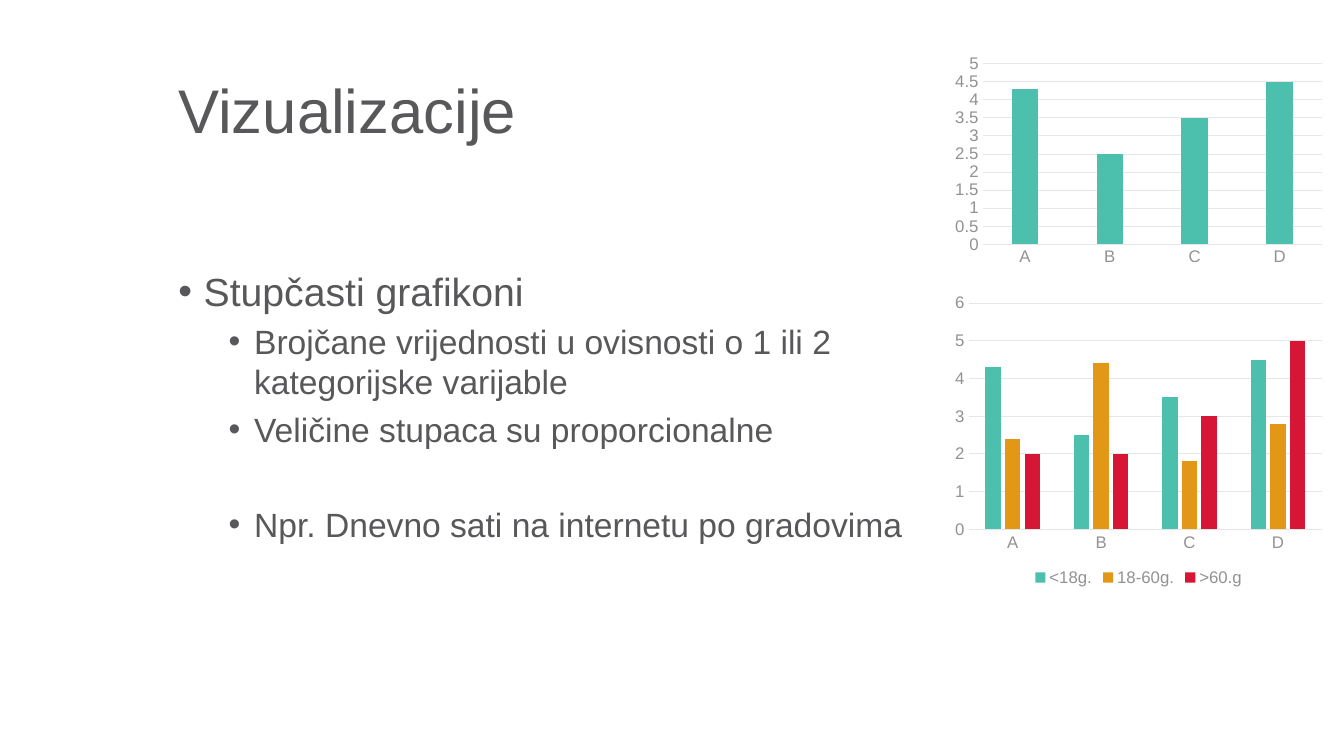
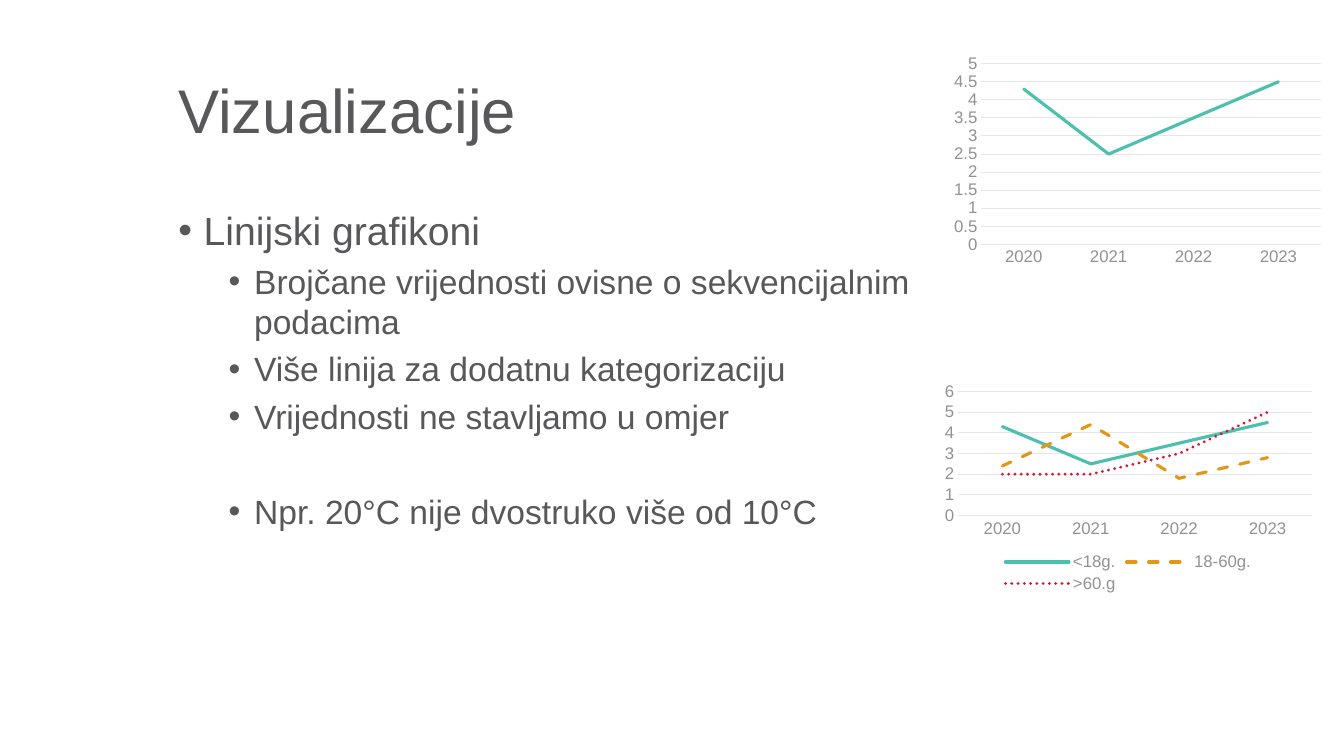
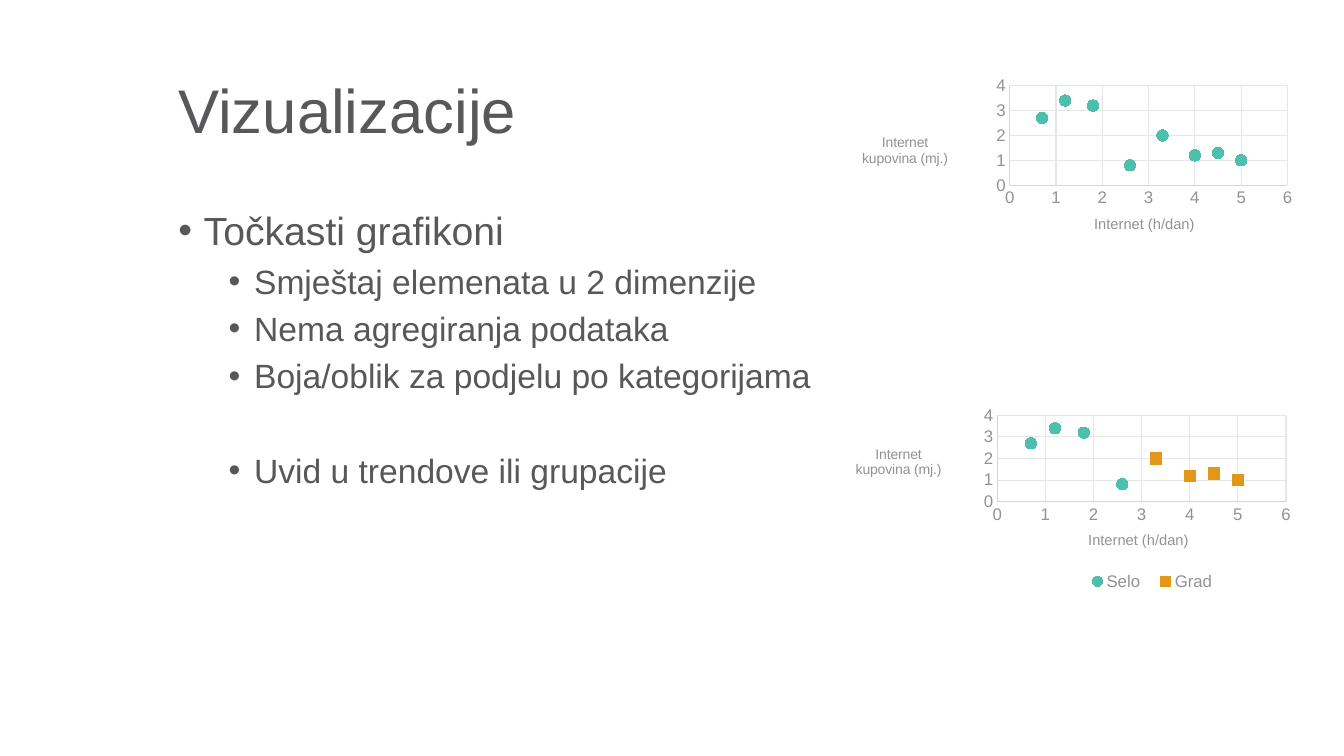
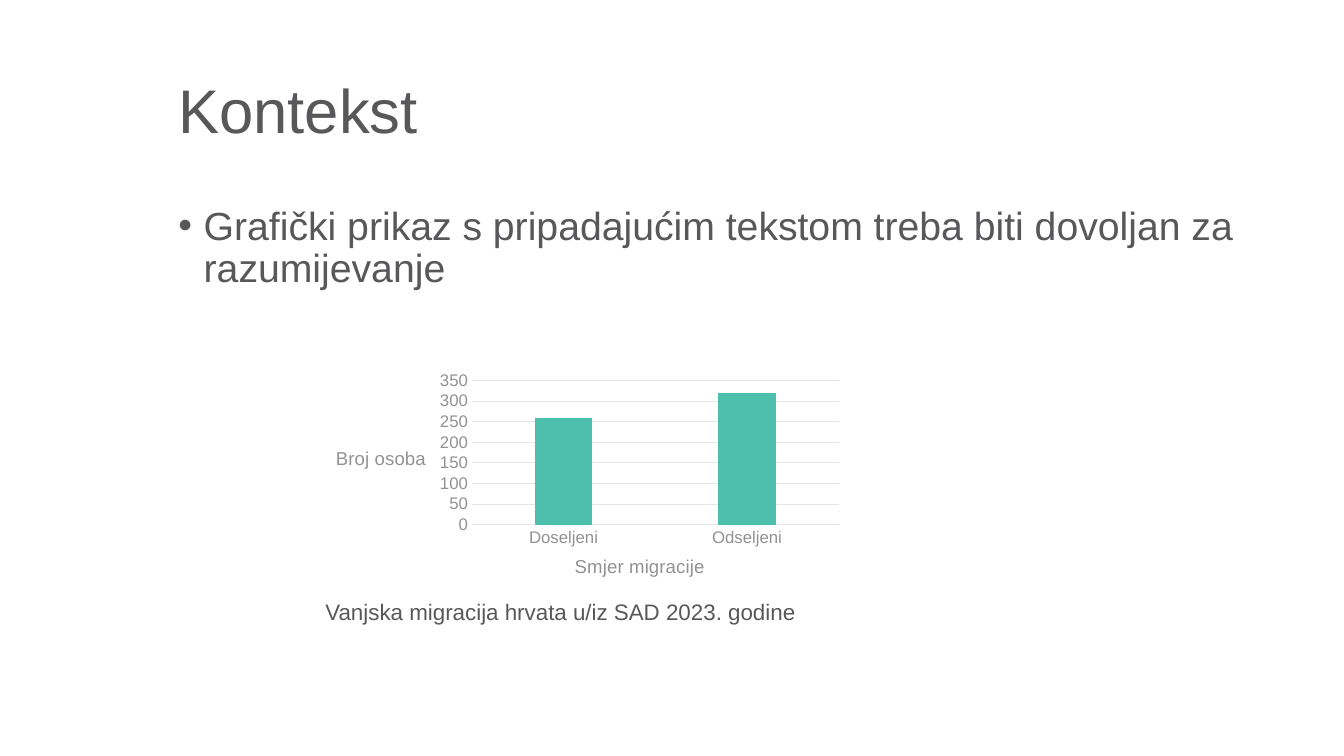
from dataclasses import dataclass

from pptx import Presentation
from pptx import util as u
from pptx.chart import data as chart_data
from pptx.dml.color import RGBColor
from pptx.enum import chart as charts, dml, text
from pptx.oxml import ns, xmlchemy


# Theme: colours, type sizes and the places the slides share
@dataclass(frozen=True)
class Theme:
    font: str = "Arial"
    ink: str = "58585A"
    label: str = "929294"
    grid: str = "E6E6E6"
    axis: str = "D5D5D6"
    series: tuple = ("4CC0AD", "E39717", "D71635")
    title_size: float = 44
    body_sizes: tuple = (28, 24)
    caption_size: float = 16
    tick_size: float = 12
    chart_size: float = 10
    indents: tuple = (0.64, 1.91)
    point_gap: float = 5
    section_gap: float = 39
    title_area: tuple = (4.24, 1.02, 27.31, 3.68)


THEME = Theme()
DASHES = (dml.MSO_LINE.SOLID, dml.MSO_LINE.DASH, dml.MSO_LINE.ROUND_DOT)
MARKERS = (charts.XL_MARKER_STYLE.CIRCLE, charts.XL_MARKER_STYLE.SQUARE)


# Helpers
def style_font(font, size, color):
    font.name = THEME.font
    font.size = u.Pt(size)
    font.color.rgb = RGBColor.from_string(color)


def write(para, words, size, color=THEME.ink, before=0, spacing=None):
    para.space_before = u.Pt(before)
    para.alignment = text.PP_ALIGN.LEFT
    if spacing:
        para.line_spacing = spacing
    span = para.add_run()
    span.text = words
    style_font(span.font, size, color)


def add_bullet(para, level):
    para.level = level
    props = para._p.get_or_add_pPr()
    props.set("marL", str(u.Cm(THEME.indents[level])))
    props.set("indent", str(-u.Cm(THEME.indents[0])))
    for tag, name, value in (("a:buFont", "typeface", THEME.font), ("a:buChar", "char", "•")):
        child = xmlchemy.OxmlElement(tag)
        child.set(name, value)
        props.append(child)


def set_layout(parent, index, x, y, w=None, h=None, inner=False):
    """Give a chart part a fixed place, in percent of the chart."""
    old = parent.find(ns.qn("c:layout"))
    if old is not None:
        parent.remove(old)
    layout = xmlchemy.OxmlElement("c:layout")
    manual = xmlchemy.OxmlElement("c:manualLayout")
    layout.append(manual)
    values = {"layoutTarget": "inner"} if inner else {}
    values.update(xMode="edge", yMode="edge")
    values.update((tag, share / 100) for tag, share in zip("xywh", (x, y, w, h))
                  if share is not None)
    for tag, value in values.items():
        child = xmlchemy.OxmlElement(f"c:{tag}")
        child.set("val", str(value))
        manual.append(child)
    parent.insert(index, layout)


def set_axis_title(axis, words, size, x, y):
    title = axis.axis_title
    para = title.text_frame.paragraphs[0]
    span = para.add_run()
    span.text = words
    style_font(span.font, size, THEME.label)
    span.font.bold = False
    body = title._element.find(".//" + ns.qn("a:bodyPr"))
    body.set("rot", "0")
    body.set("vert", "horz")
    set_layout(title._element, 1, x, y)


def drop_empty_points(chart):
    for point in list(chart._chartSpace.iter(ns.qn("c:pt"))):
        if point.findtext(ns.qn("c:v")) in (None, "", "None"):
            point.getparent().remove(point)


def category_data(categories, **series):
    data = chart_data.CategoryChartData()
    data.categories = categories
    for name, values in series.items():
        data.add_series(name, values)
    return data


def point_data(across, **series):
    data = chart_data.XyChartData()
    for name, values in series.items():
        row = data.add_series(name)
        for x, y in zip(across, values):
            row.add_data_point(x, y)
    return data


class Deck:
    def __init__(self):
        self.file = Presentation()
        self.file.slide_width = u.Cm(33.87)
        self.file.slide_height = u.Cm(19.05)
        self.page = None

    def place(self, box, area):
        box.left, box.top, box.width, box.height = map(u.Cm, area)

    def add_page(self, title):
        self.page = self.file.slides.add_slide(self.file.slide_layouts[1])
        box = self.page.shapes.title
        self.place(box, THEME.title_area)
        box.text_frame.vertical_anchor = text.MSO_ANCHOR.MIDDLE
        box.text_frame.auto_size = text.MSO_AUTO_SIZE.NONE
        write(box.text_frame.paragraphs[0], title, THEME.title_size, spacing=0.9)

    def add_list(self, head, items=(), closing=None, area=None, spacing=1.0):
        """A head line, its points, and a closing point set further down."""
        box = self.page.placeholders[1]
        self.place(box, area)
        frame = box.text_frame
        frame.auto_size = text.MSO_AUTO_SIZE.NONE
        rows = [(head, 0, 0)] + [(item, 1, THEME.point_gap) for item in items]
        if closing:
            rows.append((closing, 1, THEME.section_gap))
        for number, (words, level, before) in enumerate(rows):
            para = frame.add_paragraph() if number else frame.paragraphs[0]
            add_bullet(para, level)
            write(para, words, THEME.body_sizes[level], before=before, spacing=spacing)

    def add_caption(self, words, area):
        box = self.page.shapes.add_textbox(*map(u.Cm, area))
        box.text_frame.word_wrap = True
        write(box.text_frame.paragraphs[0], words, THEME.caption_size)

    def add_chart(self, kind, data, area, legend=False, titles=(), plot=None, legend_area=None):
        chart = self.page.shapes.add_chart(kind, *map(u.Cm, area), data).chart
        drop_empty_points(chart)
        style_font(chart.font, THEME.chart_size, THEME.ink)
        chart.has_title = False
        chart.has_legend = legend
        if legend:
            chart.legend.position = charts.XL_LEGEND_POSITION.BOTTOM
            chart.legend.include_in_layout = False
            style_font(chart.legend.font, THEME.tick_size, THEME.label)
        if legend_area:
            set_layout(chart.legend._element, 1, *legend_area)
        chart.plots[0].vary_by_categories = False
        self.style_axes(chart, kind == charts.XL_CHART_TYPE.XY_SCATTER)
        self.style_series(chart, kind)
        for axis, title in zip((chart.category_axis, chart.value_axis), titles):
            set_axis_title(axis, *title)
        if plot:
            set_layout(chart._chartSpace.chart.plotArea, 0, *plot, inner=True)

    def style_axes(self, chart, scatter):
        across, up = chart.category_axis, chart.value_axis
        for axis, grid, line in ((across, scatter, True), (up, True, scatter)):
            axis.major_tick_mark = axis.minor_tick_mark = charts.XL_TICK_MARK.NONE
            style_font(axis.tick_labels.font, THEME.tick_size, THEME.label)
            axis.has_major_gridlines = grid
            if grid:
                self.style_line(axis.major_gridlines.format.line, THEME.grid, 0.75)
            if line:
                self.style_line(axis.format.line, THEME.axis if scatter else THEME.grid, 0.75)
            else:
                axis.format.line.fill.background()
        if scatter:
            across.minimum_scale, across.maximum_scale, across.major_unit = 0, 6, 1

    def style_line(self, line, color, width):
        line.color.rgb = RGBColor.from_string(color)
        line.width = u.Pt(width)

    def style_series(self, chart, kind):
        plot = chart.plots[0]
        if kind == charts.XL_CHART_TYPE.COLUMN_CLUSTERED:
            plot.gap_width = 219
            plot.overlap = -27 if len(plot.series) > 1 else 0
        for number, (series, color) in enumerate(zip(plot.series, THEME.series)):
            look = series.format
            if kind == charts.XL_CHART_TYPE.COLUMN_CLUSTERED:
                self.fill(look, color)
                continue
            series.smooth = False
            if kind == charts.XL_CHART_TYPE.LINE:
                series.marker.style = charts.XL_MARKER_STYLE.NONE
                self.style_line(look.line, color, 2.25)
                look.line.dash_style = DASHES[number]
                look.line._get_or_add_ln().set("cap", "rnd")
            else:
                look.line.fill.background()
                series.marker.style = MARKERS[number]
                series.marker.size = 8
                self.fill(series.marker.format, color)
                self.style_line(series.marker.format.line, color, 0.75)

    def fill(self, look, color):
        look.fill.solid()
        look.fill.fore_color.rgb = RGBColor.from_string(color)


# Data shared by the slides
SINGLE = {"Series 1": (4.3, 2.5, 3.5, 4.5)}
BY_AGE = {"<18g.": (4.3, 2.5, 3.5, 4.5), "18-60g.": (2.4, 4.4, 1.8, 2.8), ">60.g": (2, 2, 3, 5)}
CITIES = ("A", "B", "C", "D")
YEARS = ("2020", "2021", "2022", "2023")
HOURS = (0.7, 1.8, 2.6, 3.3, 4, 4.5, 5, 1.2)
PURCHASES = (2.7, 3.2, 0.8, 2, 1.2, 1.3, 1, 3.4)
IN_TOWN = range(3, 7)


def main():
    deck = Deck()
    kinds = charts.XL_CHART_TYPE

    # Column charts
    deck.add_page("Vizualizacije")
    deck.add_list("Stupčasti grafikoni",
                  ("Brojčane vrijednosti u ovisnosti o 1 ili 2 kategorijske varijable",
                   "Veličine stupaca su proporcionalne"),
                  "Npr. Dnevno sati na internetu po gradovima",
                  area=(4.24, 6.6, 19.3, 10.57))
    deck.add_chart(kinds.COLUMN_CLUSTERED, category_data(CITIES, **BY_AGE),
                   (23.88, 7.26, 9.63, 7.62), legend=True)
    deck.add_chart(kinds.COLUMN_CLUSTERED, category_data(CITIES, **SINGLE),
                   (23.88, 1.27, 9.63, 5.55))

    # Line charts
    deck.add_page("Vizualizacije")
    deck.add_list("Linijski grafikoni",
                  ("Brojčane vrijednosti ovisne o sekvencijalnim podacima",
                   "Više linija za dodatnu kategorizaciju",
                   "Vrijednosti ne stavljamo u omjer"),
                  "Npr. 20°C nije dvostruko više od 10°C",
                  area=(4.24, 5.08, 19.38, 12.09))
    deck.add_chart(kinds.LINE, category_data(YEARS, **SINGLE), (23.85, 1.27, 9.63, 5.55))
    deck.add_chart(kinds.LINE, category_data(YEARS, **BY_AGE), (23.62, 9.53, 9.63, 5.51),
                   legend=True)

    # Scatter charts
    deck.add_page("Vizualizacije")
    deck.add_list("Točkasti grafikoni",
                  ("Smještaj elemenata u 2 dimenzije",
                   "Nema agregiranja podataka",
                   "Boja/oblik za podjelu po kategorijama"),
                  "Uvid u trendove ili grupacije",
                  area=(4.24, 5.08, 19.33, 11.02))
    across, up = ("Internet (h/dan)", 10.5), ("Internet kupovina (mj.)", 10)
    deck.add_chart(kinds.XY_SCATTER, point_data(HOURS, **{"Series 1": PURCHASES}),
                   (20.62, 1.7, 12.57, 4.93), plot=(38.4, 9.3, 55.7, 51),
                   titles=((*across, 54.8, 73.5), (*up, 8.3, 32.5)))
    village = [None if i in IN_TOWN else y for i, y in enumerate(PURCHASES)]
    town = [y if i in IN_TOWN else None for i, y in enumerate(PURCHASES)]
    deck.add_chart(kinds.XY_SCATTER, point_data(HOURS, Selo=village, Grad=town),
                   (20.62, 10.06, 12.57, 5.16), plot=(35.9, 7.9, 57.9, 42.1),
                   titles=((*across, 53.6, 62.6), (*up, 7, 21)),
                   legend=True, legend_area=(52, 83, 30, 12))

    # Context
    deck.add_page("Kontekst")
    deck.add_list("Grafički prikaz s pripadajućim tekstom treba biti dovoljan za razumijevanje",
                  area=(4.24, 5.08, 27.31, 12.09), spacing=0.9)
    deck.add_chart(kinds.COLUMN_CLUSTERED,
                   category_data(("Doseljeni", "Odseljeni"), **{"Series 1": (260, 320)}),
                   (7.95, 9.25, 13.46, 5.84), plot=(29.3, 5.8, 68.7, 62.3),
                   titles=(("Smjer migracije", 13.3, 47.9, 79.4),
                           ("Broj osoba", 13.3, 3.2, 32.9)))
    deck.add_caption("Vanjska migracija hrvata u/iz SAD 2023. godine", (7.95, 14.94, 13.46, 0.94))

    deck.file.save("out.pptx")


if __name__ == "__main__":
    main()
